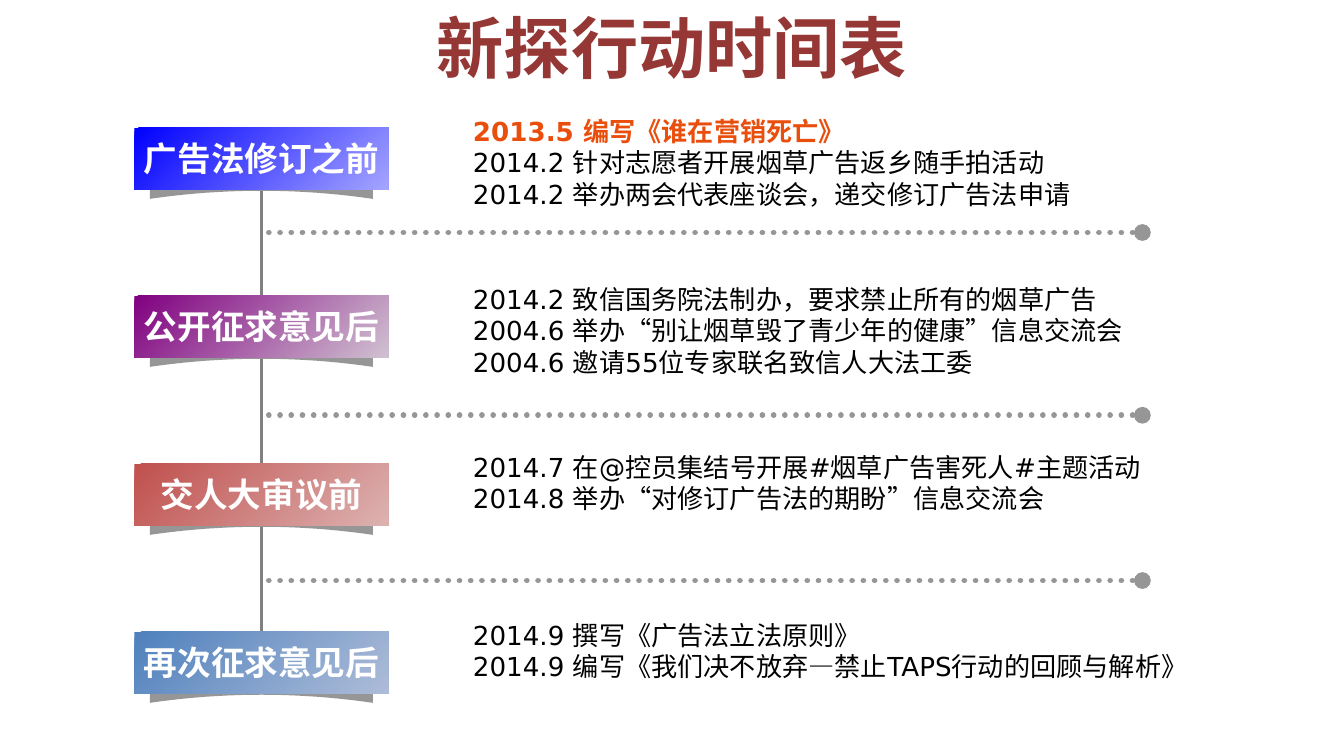
from lxml import etree
from pptx import Presentation
from pptx.dml.color import RGBColor
from pptx.enum.dml import MSO_LINE
from pptx.enum.shapes import MSO_CONNECTOR, MSO_SHAPE
from pptx.enum.text import MSO_ANCHOR, MSO_AUTO_SIZE, PP_ALIGN
from pptx.oxml.ns import qn
from pptx.util import Inches, Pt

STRAIGHT = MSO_CONNECTOR.STRAIGHT
RECTANGLE = MSO_SHAPE.RECTANGLE
DOTTED = MSO_LINE.ROUND_DOT
MIDDLE = MSO_ANCHOR.MIDDLE
GROW = MSO_AUTO_SIZE.SHAPE_TO_FIT_TEXT
CENTER, LEFT = PP_ALIGN.CENTER, PP_ALIGN.LEFT

WIDTH = 10
HEIGHT = WIDTH * 9 / 16
STAGE_LEFT, STAGE_WIDTH, STAGE_HEIGHT = 1, 1.89, 0.46
STAGE_CENTER = STAGE_LEFT + STAGE_WIDTH / 2
FIRST_ROW, ROW_STEP = 0.95, 1.25
EVENT_LEFT, EVENT_RISE = 3.42, 0.14
GREY, BLACK, ORANGE = "969696", "000000", "E94E0C"

STAGES = [
    ("广告法修订之前", "0000FF", "A4A4FF", 4.91, 1.04, [
        "2013.5 编写《谁在营销死亡》",
        "2014.2 针对志愿者开展烟草广告返乡随手拍活动",
        "2014.2 举办两会代表座谈会，递交修订广告法申请"]),
    ("公开征求意见后", "800080", "D0C1D0", 5.09, 0.81, [
        "2014.2 致信国务院法制办，要求禁止所有的烟草广告",
        "2004.6 举办“别让烟草毁了青少年的健康”信息交流会",
        "2004.6 邀请55位专家联名致信人大法工委"]),
    ("交人大审议前", "C0504D", "DCB2B1", 5.41, 0.57, [
        "2014.7 在@控员集结号开展#烟草广告害死人#主题活动",
        "2014.8 举办“对修订广告法的期盼”信息交流会"]),
    ("再次征求意见后", "4F81BD", "ADBCD8", 5.59, 0.57, [
        "2014.9 撰写《广告法立法原则》",
        "2014.9 编写《我们决不放弃—禁止TAPS行动的回顾与解析》"]),
]
DIVIDERS = [1.73, 3.09, 4.32]


def color(hex_code):
    """Turn a hex string into a colour."""
    return RGBColor.from_string(hex_code)


def style(paragraph, size, font_name, hex_code, bold=False, align=LEFT):
    """Set the font and alignment of a paragraph."""
    paragraph.alignment = align
    font = paragraph.font
    font.size, font.name, font.bold = Pt(size), font_name, bold
    font.color.rgb = color(hex_code)


def add_line(slide, start, end, hex_code, weight):
    """Draw a plain straight line without shadow."""
    line = slide.shapes.add_connector(STRAIGHT, *map(Inches, start + end))
    line.line.color.rgb = color(hex_code)
    line.line.width = Pt(weight)
    etree.SubElement(line._element.spPr, qn("a:effectLst"))
    return line


def add_divider(slide, y):
    """Draw a line of round dots that ends in a larger dot."""
    divider = add_line(slide, (0.2 * WIDTH, y), (0.85 * WIDTH, y), GREY, 3)
    divider.line.dash_style = DOTTED
    outline = divider._element.spPr.find(qn("a:ln"))
    outline.set("cap", "rnd")
    etree.SubElement(outline, qn("a:tailEnd"), type="oval")


def add_curl(slide, top):
    """Draw the grey curved shade under a stage label."""
    half, sag, steps = 0.83, 0.06, 10
    shares = [1 - step / steps for step in range(2 * steps + 1)]
    arc = [(STAGE_CENTER + half * t, top + 0.17 + sag * t * t) for t in shares]
    roof = [(STAGE_CENTER + half * t, top + sag * abs(t)) for t in (-1, 0, 1)]
    outline = [(Inches(x), Inches(y)) for x, y in arc + roof]
    builder = slide.shapes.build_freeform(*outline[0], scale=1.0)
    builder.add_line_segments(outline[1:], close=True)
    curl = builder.convert_to_shape()
    curl.shadow.inherit = False
    curl.fill.solid()
    curl.fill.fore_color.rgb = color(GREY)
    curl.line.fill.background()


def add_stage(slide, top, name, dark, light):
    """Draw a stage label with a diagonal gradient."""
    add_curl(slide, top + 0.3)
    stage = slide.shapes.add_shape(
        RECTANGLE, *map(Inches, (STAGE_LEFT, top, STAGE_WIDTH, STAGE_HEIGHT)))
    stage.shadow.inherit = False
    stage.line.fill.background()
    stage.fill.gradient()
    stage.fill.gradient_angle = 315
    for stop, hex_code in zip(stage.fill.gradient_stops, (dark, light)):
        stop.color.rgb = color(hex_code)
    frame = stage.text_frame
    frame.word_wrap = False
    frame.vertical_anchor = MIDDLE
    frame.text = name
    style(frame.paragraphs[0], 18, "Calibri", "FFFFFF", True, CENTER)


def add_text(slide, box, lines):
    """Add a wrapping text box and return its paragraphs."""
    frame = slide.shapes.add_textbox(*map(Inches, box)).text_frame
    frame.word_wrap = True
    frame.auto_size = GROW
    frame.text = "\n".join(lines)
    return frame.paragraphs


def add_events(slide, top, width, height, events, highlight):
    """List the events of a stage, the first one highlighted on request."""
    box = (EVENT_LEFT, top - EVENT_RISE, width, height)
    for index, event in enumerate(add_text(slide, box, events)):
        marked = highlight and index == 0
        style(event, 14, "DejaVu Sans", ORANGE if marked else BLACK, marked)


def main():
    """Build the timeline slide."""
    deck = Presentation()
    deck.slide_width, deck.slide_height = Inches(WIDTH), Inches(HEIGHT)
    slide = deck.slides.add_slide(deck.slide_layouts[6])
    add_line(slide, (STAGE_CENTER, 1.36), (STAGE_CENTER, 4.78), "808080", 1.5)
    for row, (name, dark, light, width, height, events) in enumerate(STAGES):
        top = FIRST_ROW + row * ROW_STEP
        add_stage(slide, top, name, dark, light)
        add_events(slide, top, width, height, events, row == 0)
    for y in DIVIDERS:
        add_divider(slide, y)
    title_box = (0.1 * WIDTH, 0, 0.8 * WIDTH, 0.71)
    title = add_text(slide, title_box, ["新探行动时间表"])[0]
    style(title, 36, "Noto Sans CJK SC", "953735", True, CENTER)
    deck.save("out.pptx")


if __name__ == "__main__":
    main()
